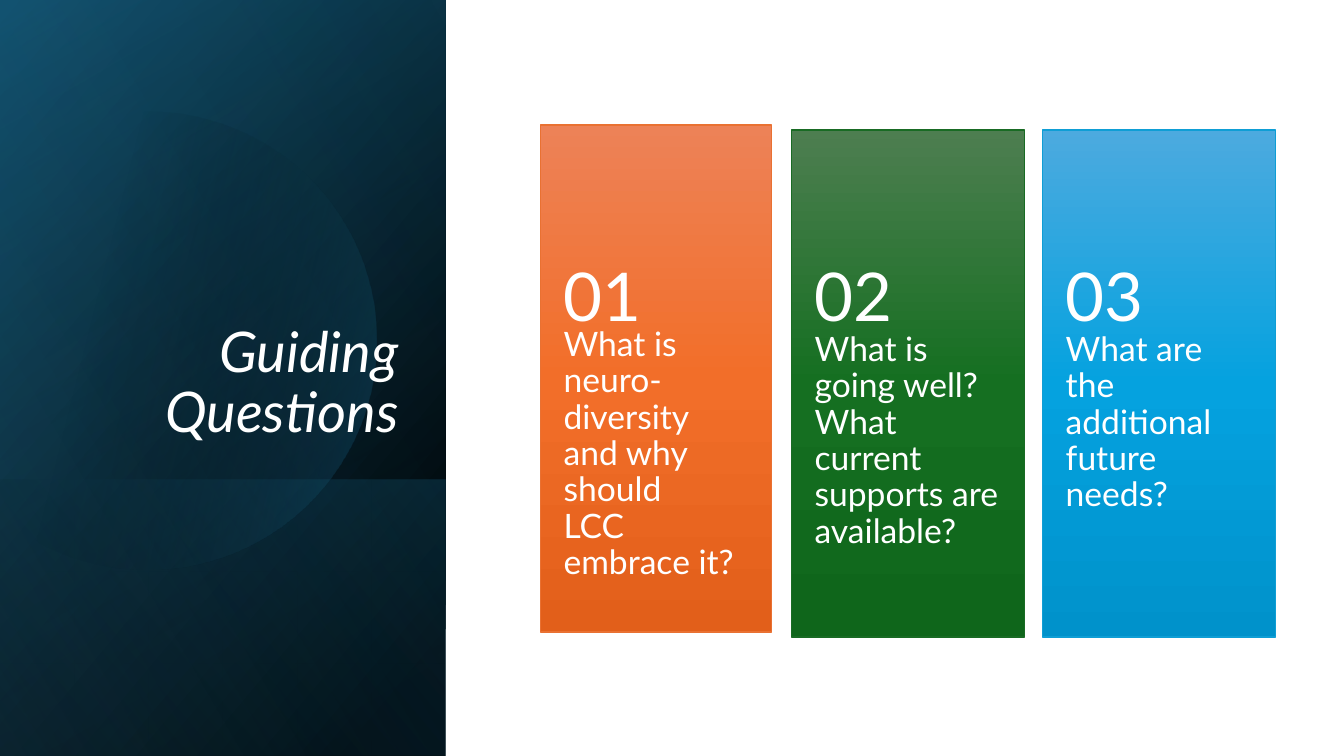
import math

import pptx
import pptx.util
import pptx.dml.color
import pptx.enum.shapes
import pptx.enum.text
import pptx.oxml
import pptx.oxml.ns
from pptx.util import Inches

ANCHOR = pptx.enum.text.MSO_ANCHOR
ALIGN = pptx.enum.text.PP_ALIGN
CARD_STEP = 2.49
NAVY_PANELS = [
    (0, 7.5, 220, [(8, "000000", 100), (100, "104862", 100)]),
    (0, 7.5, 240, [(0, "000000", 0), (99, "156082", 46)]),
    (4.76, 2.74, 140, [(2, "156082", 29), (100, "000000", 30)]),
]
CIRCLE_STOPS = [(29, "000000", 0), (100, "156082", 43)]
SHEEN = (0, 7.5, 150, [(0, "000000", 0), (99, "46B1E1", 11)])
CARDS = [
    ("What is neuro-diversity\nand why should\nLCC embrace it?", 1.24, 2.29,
     "E97132", ("ED8257", "F26E29", "E25F1A")),
    ("What is going well? What current supports are available?", 1.29, 2.31,
     "196B24", ("4D7E50", "156F21", "0F661B")),
    ("What are the additional future needs?", 1.29, 2.31,
     "0F9ED5", ("4CAADF", "05A2DF", "0092CB")),
]


def color(value):
    """Turn a hex string into a colour."""
    return pptx.dml.color.RGBColor.from_string(value)


def set_gradient(s, angle, stops):
    """Fill a shape with a linear gradient of (percent, colour, opacity) stops."""
    s.shadow.inherit = False
    s.fill.gradient()
    old = s._element.spPr.find(pptx.oxml.ns.qn("a:gradFill"))
    marks = "".join(
        f'<a:gs pos="{pos * 1000}"><a:srgbClr val="{color(value)}">'
        f'<a:alpha val="{opacity * 1000}"/></a:srgbClr></a:gs>'
        for pos, value, opacity in stops)
    new = pptx.oxml.parse_xml(
        f'<a:gradFill {pptx.oxml.ns.nsdecls("a")} rotWithShape="1">'
        f'<a:gsLst>{marks}</a:gsLst>'
        f'<a:lin ang="{angle * 60000}" scaled="0"/></a:gradFill>')
    old.getparent().replace(old, new)


def add_rect(shapes, box, angle, stops, line=None):
    """Add a gradient rectangle, outlined if a line colour is given."""
    s = shapes.add_shape(pptx.enum.shapes.MSO_SHAPE.RECTANGLE, *map(Inches, box))
    set_gradient(s, angle, stops)
    if line:
        s.line.color.rgb = color(line)
        s.line.width = pptx.util.Pt(1)
    else:
        s.line.fill.background()


def add_circle(shapes, x, y, radius):
    """Add a circle cut off at the left edge of the slide."""
    limit = math.acos(-x / radius)
    angles = [limit * (i / 60 - 1) for i in range(121)]
    points = [(Inches(x + radius * math.cos(a)), Inches(y + radius * math.sin(a)))
              for a in angles]
    builder = shapes.build_freeform(*points[0])
    builder.add_line_segments(points[1:], close=True)
    s = builder.convert_to_shape()
    set_gradient(s, 14, CIRCLE_STOPS)
    s.line.fill.background()


def add_text(shapes, box, text, size, insets, anchor, align=ALIGN.LEFT, italic=False):
    """Add a white text box."""
    tf = shapes.add_textbox(*map(Inches, box)).text_frame
    left, top, right, bottom = map(Inches, insets)
    frame = {"word_wrap": True, "vertical_anchor": anchor, "margin_left": left,
             "margin_top": top, "margin_right": right, "margin_bottom": bottom}
    for name, value in frame.items():
        setattr(tf, name, value)
    p = tf.paragraphs[0]
    p.text = text
    p.alignment = align
    p.line_spacing = 0.9
    font = {"name": "Lato", "size": pptx.util.Pt(size), "italic": italic}
    for r in p.runs:
        for name, value in font.items():
            setattr(r.font, name, value)
        r.font.color.rgb = color("FFFFFF")


def add_card(shapes, index, question, top, width, line, colors):
    """Add one numbered question card."""
    left = 5.36 + index * CARD_STEP
    stops = [(pos, value, 100) for pos, value in zip((0, 50, 100), colors)]
    add_rect(shapes, (left, top, width, 5.03), 90, stops, line)
    add_text(shapes, (left, top + 2.01, width, 3.02), question, 24,
             (0.23, 0, 0.23, 0.36), ANCHOR.TOP)
    add_text(shapes, (left, 2.42, 2.31, 1.11), f"{index + 1:02}", 48,
             (0.23, 0.18, 0.23, 0.18), ANCHOR.MIDDLE)


def add_panel(shapes, top, height, angle, stops):
    """Add one layer of the side panel."""
    add_rect(shapes, (0, top, 4.42, height), angle, stops)


def main():
    """Build the slide and save it."""
    prs = pptx.Presentation()
    prs.slide_width, prs.slide_height = Inches(13.33), Inches(7.5)
    shapes = prs.slides.add_slide(prs.slide_layouts[6]).shapes
    for panel in NAVY_PANELS:
        add_panel(shapes, *panel)
    add_circle(shapes, 1.46, 3.38, 2.27)
    add_panel(shapes, *SHEEN)
    add_text(shapes, (0.64, 1.84, 3.41, 2.62), "Guiding Questions", 40,
             (0.1, 0.05, 0.1, 0.05), ANCHOR.BOTTOM, ALIGN.RIGHT, True)
    for index, card in enumerate(CARDS):
        add_card(shapes, index, *card)
    prs.save("out.pptx")


if __name__ == "__main__":
    main()
